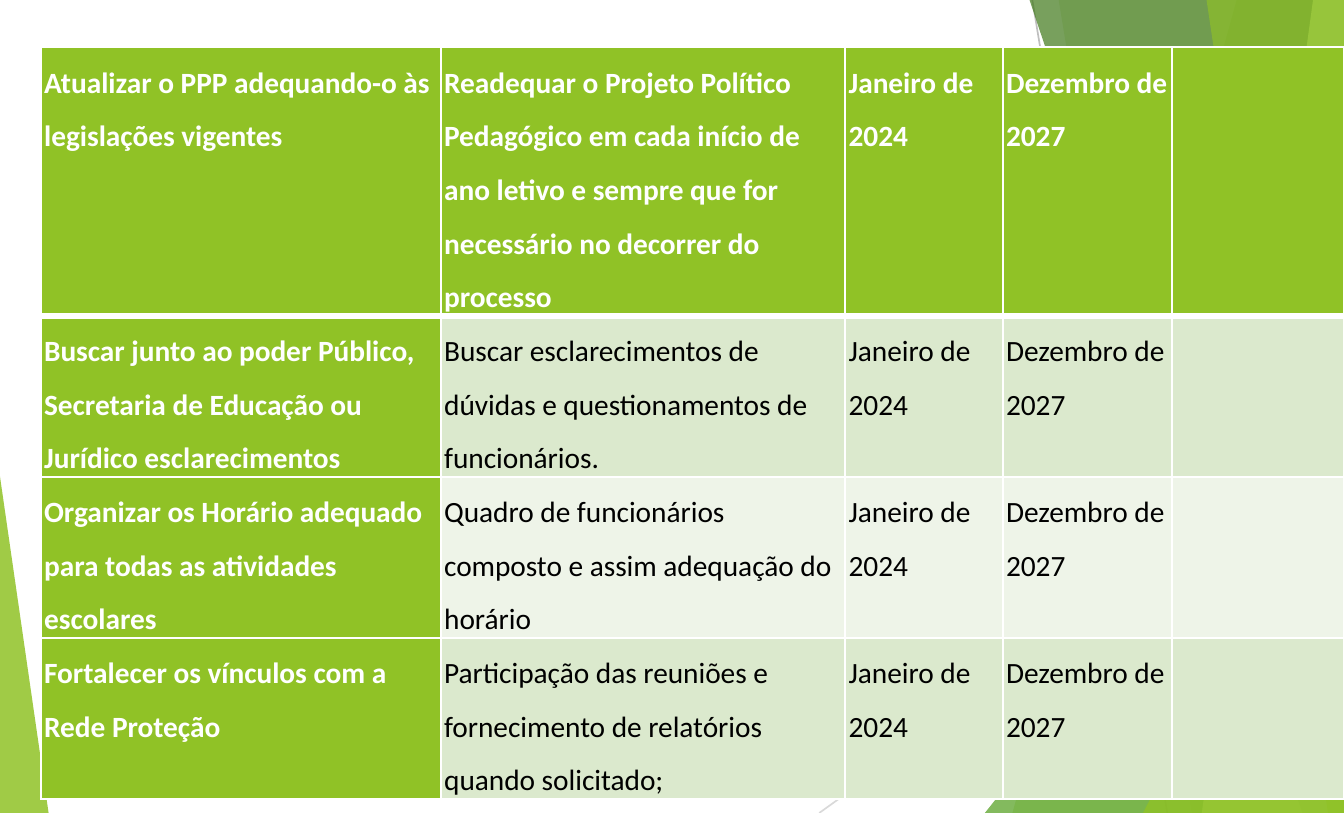
from pptx import Presentation
from pptx.dml.color import RGBColor
from pptx.enum.shapes import MSO_CONNECTOR as Connector, MSO_SHAPE as Shape
from pptx.oxml.ns import qn
from pptx.util import Cm, Pt
from lxml.etree import SubElement

WIDTH, HEIGHT = 21, 12.7
GREEN, WHITE, BLACK = "90C226", "FFFFFF", "000000"
BANDS = ["DBE9CD", "EEF4E8"]
COLUMNS = [6.25, 6.32, 2.46, 2.64, 2.69]
ROWS = [2.36, 1.98, 1.55, 1.55]
START, END = "Janeiro de 2024", "Dezembro de 2027"
ACTIONS = [
    ("Atualizar o PPP adequando-o às legislações vigentes",
     "Readequar o Projeto Político Pedagógico em cada início de ano letivo "
     "e sempre que for necessário no decorrer do processo"),
    ("Buscar junto ao poder Público, Secretaria de Educação ou Jurídico esclarecimentos",
     "Buscar esclarecimentos de dúvidas e questionamentos de funcionários."),
    ("Organizar os Horário adequado para todas as atividades escolares",
     "Quadro de funcionários composto e assim adequação do horário"),
    ("Fortalecer os vínculos com a Rede Proteção",
     "Participação das reuniões e fornecimento de relatórios quando solicitado;"),
]


def rgb(code):
    """Turn a hex string into a colour."""
    return RGBColor.from_string(code)


def paint(shape, colour, opacity):
    """Give a shape a see-through fill with no line or shadow."""
    shape.shadow.inherit = False
    shape.line.fill.background()
    shape.fill.solid()
    shape.fill.fore_color.rgb = rgb(colour)
    tint = shape.fill._xPr.find(qn("a:solidFill"))[0]
    SubElement(tint, qn("a:alpha"), val=str(opacity * 1000))


def add_ray(page, start, end, colour):
    """Draw a thin line between two points."""
    ray = page.shapes.add_connector(Connector.STRAIGHT, *map(Cm, start + end))
    ray.line.color.rgb = rgb(colour)
    ray.line.width = Pt(0.75)
    SubElement(ray._element.spPr, qn("a:effectLst"))


def add_panel(page, box, top_left, bottom_left, colour, opacity):
    """Draw a panel with a slanted left edge that fills the box to its right."""
    left, top, width, height = box
    right, bottom = left + width, top + height
    corners = [(left + top_left, top), (right, top), (right, bottom),
               (left + bottom_left, bottom)]
    points = [(Cm(x), Cm(y)) for x, y in corners]
    builder = page.shapes.build_freeform(*points[0])
    builder.add_line_segments(points[1:], close=True)
    paint(builder.convert_to_shape(), colour, opacity)


def add_wedge(page, box, apex, colour, opacity):
    """Draw a triangle with its apex at the given share of its width."""
    wedge = page.shapes.add_shape(Shape.ISOSCELES_TRIANGLE, *map(Cm, box))
    wedge.adjustments[0] = apex
    paint(wedge, colour, opacity)


def add_facets(page, box):
    """Place the overlapping facets on the right of the box and one on its left."""
    left, top, width, height = box
    right, bottom = left + width, top + height
    band = (left + 15.82, top - 0.02, width - 15.82, height + 0.02)
    add_ray(page, (left + 16.13, top), (left + 18.24, bottom), "BFBFBF")
    add_ray(page, (right, top + 6.81), (left + 12.8, bottom), "D9D9D9")
    add_panel(page, band, 3.51, 0, GREEN, 30)
    add_panel(page, band, 0.72, 2.8, GREEN, 20)
    add_wedge(page, (right - 5.61, bottom - 7.06, 5.61, 7.06), 1, "54A021", 72)
    add_panel(page, band, 0.26, 4.53, "3F7819", 70)
    add_panel(page, band, 4.7, 2.96, "C0E474", 70)
    add_panel(page, band, 3.03, 4.93, GREEN, 65)
    add_wedge(page, (right - 3.14, bottom - 6.05, 3.14, 6.05), 1, GREEN, 80)
    add_wedge(page, (left, bottom - 5.26, 0.76, 5.26), 0, GREEN, 85)


def add_borders(cell, widths):
    """Draw white borders with widths for left, right, top and bottom."""
    properties = cell._tc.get_or_add_tcPr()
    for side, width in zip("LRTB", widths):
        border = SubElement(properties, qn(f"a:ln{side}"), w=str(Pt(width)))
        fill = SubElement(border, qn("a:solidFill"))
        SubElement(fill, qn("a:srgbClr"), val=WHITE)


def fill_cell(cell, text, row, column):
    """Style a cell by its place in the table and write its text."""
    heading = row == 0 or column == 0
    add_borders(cell, (1, 1, 3 if row == 1 else 1, 3 if row == 0 else 1))
    cell.fill.solid()
    cell.fill.fore_color.rgb = rgb(GREEN if heading else BANDS[(row - 1) % 2])
    if not text:
        return
    cell.margin_left = cell.margin_right = Cm(0.05)
    cell.margin_top = cell.margin_bottom = 0
    cell.text = text
    para = cell.text_frame.paragraphs[0]
    para.line_spacing = 1.5
    para.font.name = "Calibri"
    para.font.size = Pt(13)
    para.font.bold = heading
    para.font.color.rgb = rgb(WHITE if heading else BLACK)


def add_plan(page, box):
    """Place the table of actions, measures and dates in the box."""
    frame = page.shapes.add_table(len(ROWS), len(COLUMNS), *map(Cm, box))
    table = frame.table
    for column, width in zip(table.columns, COLUMNS):
        column.width = Cm(width)
    for row, height in zip(table.rows, ROWS):
        row.height = Cm(height)
    frame.height = Cm(box[3])
    for row, action in enumerate(ACTIONS):
        for column, text in enumerate((*action, START, END, "")):
            fill_cell(table.cell(row, column), text, row, column)


def main():
    """Build the slide and save the deck."""
    deck = Presentation()
    deck.slide_width, deck.slide_height = Cm(WIDTH), Cm(HEIGHT)
    page = deck.slides.add_slide(deck.slide_layouts[6])
    add_facets(page, (0, 0, WIDTH, HEIGHT))
    add_plan(page, (0.64, 0.74, sum(COLUMNS), 11.23))
    deck.save("out.pptx")


if __name__ == "__main__":
    main()
